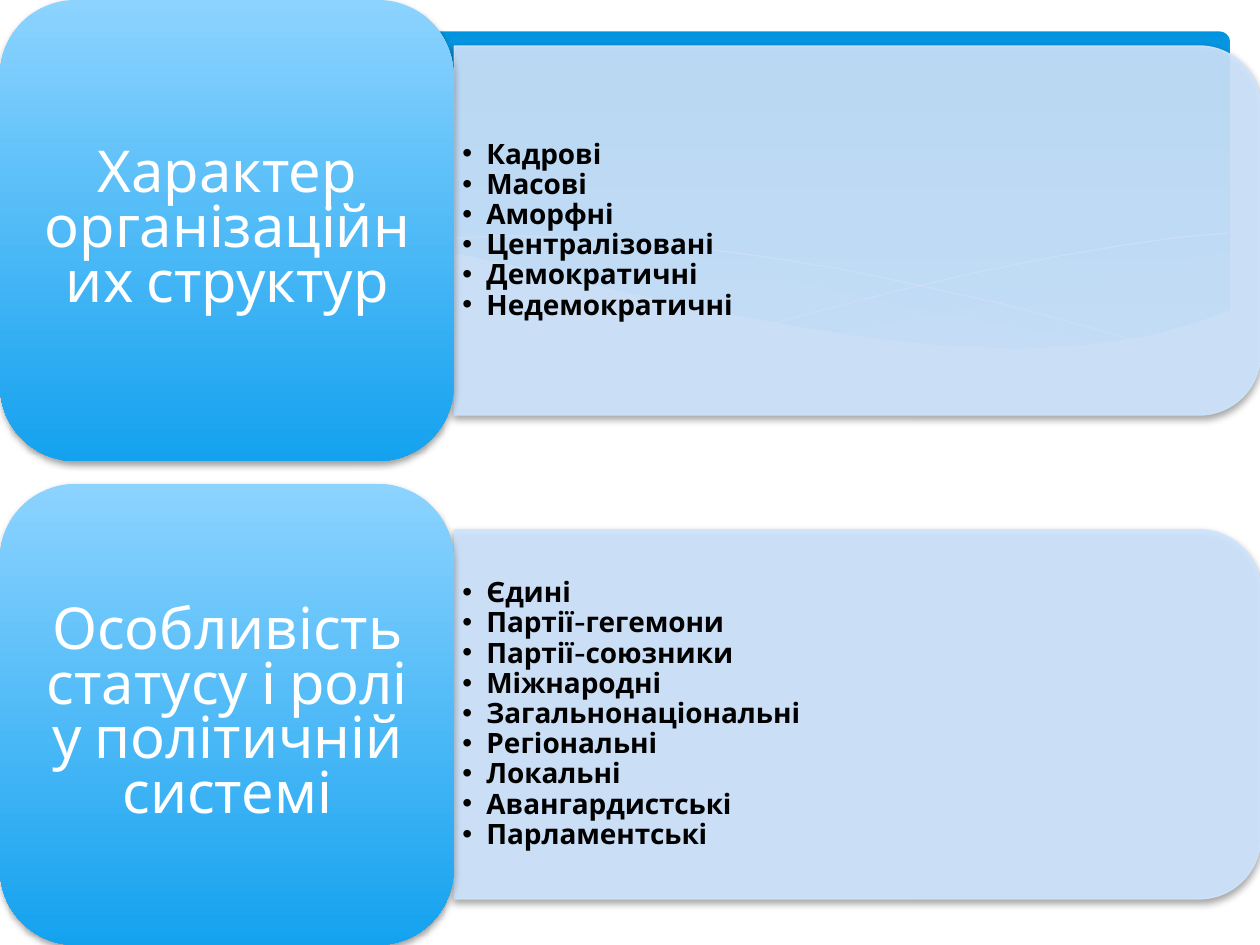
from lxml.etree import SubElement
from pptx import Presentation
from pptx.dml.color import RGBColor
from pptx.enum.shapes import MSO_SHAPE
from pptx.enum.text import MSO_ANCHOR, MSO_AUTO_SIZE, PP_ALIGN
from pptx.oxml.ns import qn
from pptx.util import Inches, Pt

ROWS = [
    ("Характер організаційних структур",
     ["Кадрові", "Масові", "Аморфні", "Централізовані", "Демократичні",
      "Недемократичні"]),
    ("Особливість статусу і ролі у політичній системі",
     ["Єдині", "Партії-гегемони", "Партії-союзники", "Міжнародні",
      "Загальнонаціональні", "Регіональні", "Локальні", "Авангардистські",
      "Парламентські"]),
]
CREST = [(9.75, 2), (9.35, 2.07), (8.61, 2.23), (7.79, 2.42), (7.06, 2.57),
         (6.61, 2.65), (7.05, 2.71), (7.57, 2.76), (8.14, 2.78), (8.72, 2.74),
         (9.21, 2.65), (9.49, 2.57), (9.76, 2.47), (9.76, 2)]
SWELL = [(8.93, 2.73), (8.37, 2.65), (7.75, 2.54), (7.06, 2.4), (6.29, 2.22),
         (5.69, 2.08), (5.14, 1.98), (4.65, 1.91), (4.2, 1.87), (3.61, 1.85),
         (2.86, 1.91), (3.62, 2.03), (4.49, 2.22), (5.3, 2.4), (6.01, 2.55),
         (6.8, 2.68), (7.48, 2.76), (8.07, 2.78), (8.57, 2.77)]
FALL = [(3.09, 1.95), (3.44, 1.9), (4.01, 1.87), (4.69, 1.89), (5.33, 1.94),
        (6.08, 2.04), (6.65, 2.13), (7.27, 2.26), (7.95, 2.41), (8.69, 2.61),
        (9.07, 2.72)]
RISE = [(6.13, 2.57), (6.53, 2.46), (7.2, 2.29), (7.76, 2.16), (8.36, 2.04),
        (8.95, 1.94), (9.38, 1.88), (9.75, 1.85)]
SHORE = [(9.77, 2.46), (9.5, 2.56), (9.1, 2.67), (8.63, 2.74), (8.09, 2.77),
         (7.44, 2.74), (6.88, 2.68), (6.26, 2.58), (5.55, 2.45), (4.75, 2.27),
         (4.18, 2.13), (3.65, 2.02), (3.16, 1.94), (2.71, 1.88), (2.3, 1.85),
         (1.77, 1.84), (1.19, 1.87), (0.76, 1.95), (0.4, 2.05), (0.23, 2.13),
         (0.23, 3.29), (9.77, 3.29)]


def tint(code):
    return RGBColor.from_string(code)


def paint(fill, code, alpha=100):
    fill.solid()
    fill.fore_color.rgb = tint(code)
    if alpha < 100:
        node = fill.fore_color._xFill.find(qn("a:srgbClr"))
        SubElement(node, qn("a:alpha"), val=str(alpha * 1000))


def blend(fill, top, base, end=1):
    fill.gradient()
    fill.gradient_angle = 270
    for stop, code, spot in zip(fill.gradient_stops, (top, base), (0, end)):
        stop.color.rgb = tint(code)
        stop.position = spot


def shade(shape):
    glow = shape._element.spPr.find(qn("a:effectLst"))
    drop = SubElement(glow, qn("a:outerShdw"), blurRad=str(Pt(4)),
                      dist=str(Pt(2)), dir="5400000", rotWithShape="0")
    black = SubElement(drop, qn("a:srgbClr"), val="000000")
    SubElement(black, qn("a:alpha"), val="38000")


def write(para, text, font, size, color, bold=False, space=0.9,
          align=PP_ALIGN.LEFT, dot=False):
    para.alignment = align
    para.line_spacing = space
    para.space_before = para.space_after = Pt(0)
    run = para.add_run()
    run.text = text
    run.font.name, run.font.size, run.font.bold = font, Pt(size), bold
    run.font.color.rgb = tint(color)
    if dot:
        para.level = 1
        props = para._p.get_or_add_pPr()
        props.set("marL", str(Inches(0.19)))
        props.set("indent", str(Inches(-0.19)))
        SubElement(props, qn("a:buFont"), typeface="Arial")
        SubElement(props, qn("a:buChar"), char="•")


class Deck:
    font = "Cabin"
    pale = "CEE5FE"
    wave = "C6E7FC"
    white = "FFFFFF"

    def __init__(self, show):
        self.slide = show.slides.add_slide(show.slide_layouts[4])
        self.shapes = self.slide.shapes
        paint(self.slide.background.fill, self.white)
        title = self.shapes.title._element
        title.getparent().remove(title)

    def block(self, kind, left, top, width, height):
        shape = self.shapes.add_shape(kind, Inches(left), Inches(top),
                                      Inches(width), Inches(height))
        shape.shadow.inherit = False
        shape.line.fill.background()
        return shape

    def band(self):
        shape = self.block(MSO_SHAPE.ROUNDED_RECTANGLE, 0.25, 0.25, 9.51, 2.7)
        shape.adjustments[0] = 0.03
        blend(shape.fill, "0293E0", "83D3FE", 0.9)

    def curve(self, points, close=True):
        spots = [(Inches(x), Inches(y)) for x, y in points]
        form = self.shapes.build_freeform(*spots[0])
        form.add_line_segments(spots[1:], close=close)
        shape = form.convert_to_shape()
        shape.shadow.inherit = False
        return shape

    def area(self, points, code, alpha=100):
        shape = self.curve(points)
        paint(shape.fill, code, alpha)
        shape.line.fill.background()

    def stroke(self, points):
        shape = self.curve(points, False)
        shape.fill.background()
        paint(shape.line.fill, self.white)
        shape.line.width = Pt(0)

    def panel(self, top):
        shape = self.block(MSO_SHAPE.ROUND_2_SAME_RECTANGLE,
                           5.34, top - 1.37, 2.93, 6.4)
        shape.rotation = 90
        paint(shape.fill, self.pale, 90)
        paint(shape.line.fill, self.pale, 90)
        shape.line.width = Pt(0.75)
        shade(shape)

    def tile(self, top):
        shape = self.block(MSO_SHAPE.ROUNDED_RECTANGLE, 0, top, 3.6, 3.66)
        blend(shape.fill, "8CD3FF", "14A2EF")
        shade(shape)

    def fill(self, spot, lines, box, inset, **style):
        holder = next(p for p in self.slide.placeholders
                      if p.placeholder_format.idx == spot)
        self.shapes._spTree.append(holder._element)
        holder.left, holder.top, holder.width, holder.height = map(Inches, box)
        frame = holder.text_frame
        frame.word_wrap = True
        frame.auto_size = MSO_AUTO_SIZE.NONE
        frame.vertical_anchor = MSO_ANCHOR.MIDDLE
        frame.margin_left = frame.margin_right = Inches(inset)
        frame.margin_top = frame.margin_bottom = Inches(inset / 2)
        for i, line in enumerate(lines):
            para = frame.add_paragraph() if i else frame.paragraphs[0]
            write(para, line, self.font, **style)

    def row(self, index, head, items):
        top = index * 3.84
        spot = index * 2 + 1
        self.panel(top)
        self.fill(spot + 1, items, (3.6, top + 0.51, 6.26, 2.64), 0.07,
                  size=16, color="000000", bold=True, dot=True)
        self.tile(top)
        self.fill(spot, [head], (0.18, top + 0.18, 3.25, 3.31), 0.14,
                  size=33, color=self.white, space=0.79,
                  align=PP_ALIGN.CENTER)


def main():
    show = Presentation()
    show.slide_width, show.slide_height = Inches(10), Inches(7.5)
    deck = Deck(show)
    deck.band()
    deck.area(CREST, deck.wave, 29)
    deck.area(SWELL, deck.wave, 40)
    deck.stroke(FALL)
    deck.stroke(RISE)
    deck.area(SHORE, deck.white)
    for index, (head, items) in enumerate(ROWS):
        deck.row(index, head, items)
    show.save("out.pptx")


if __name__ == "__main__":
    main()
